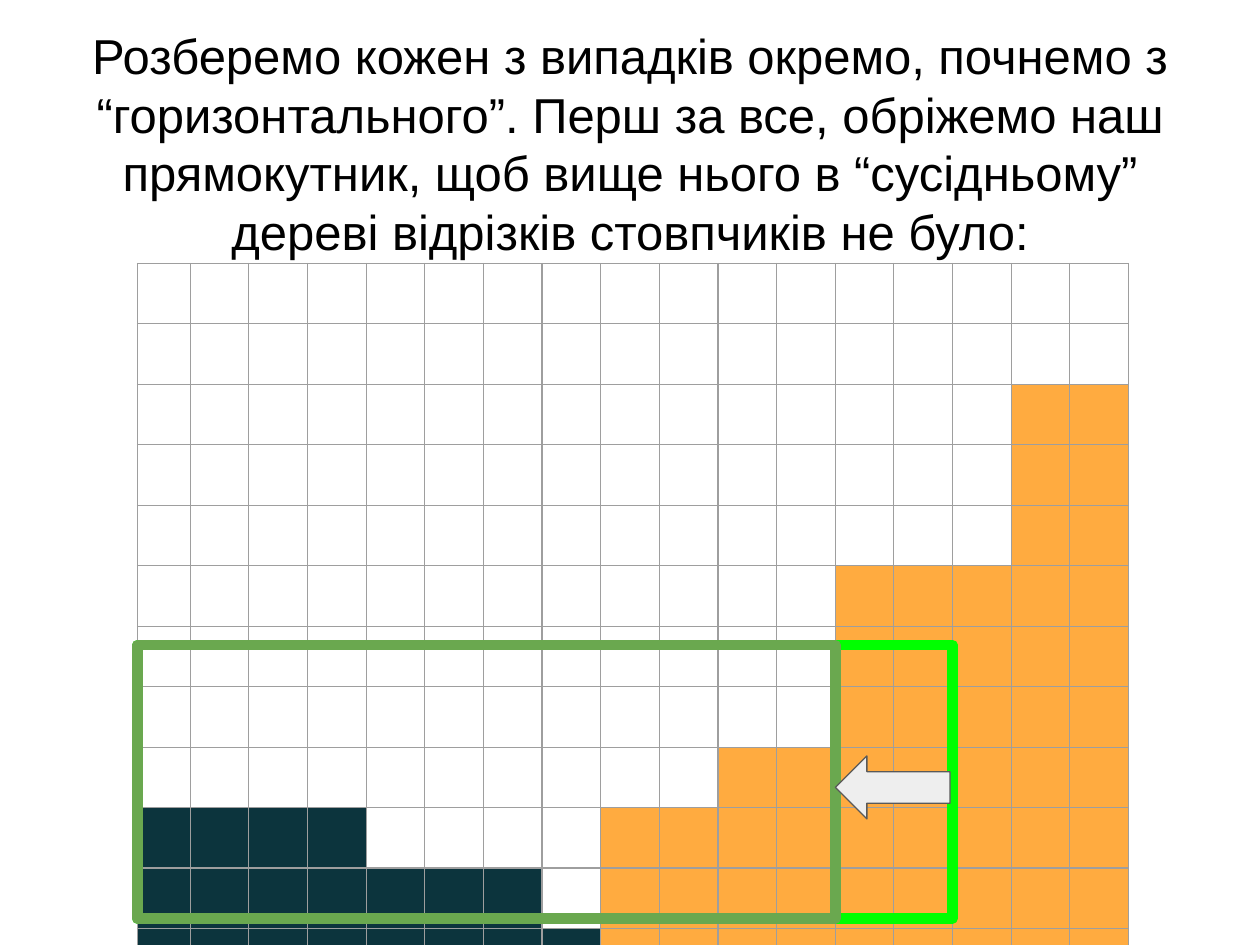
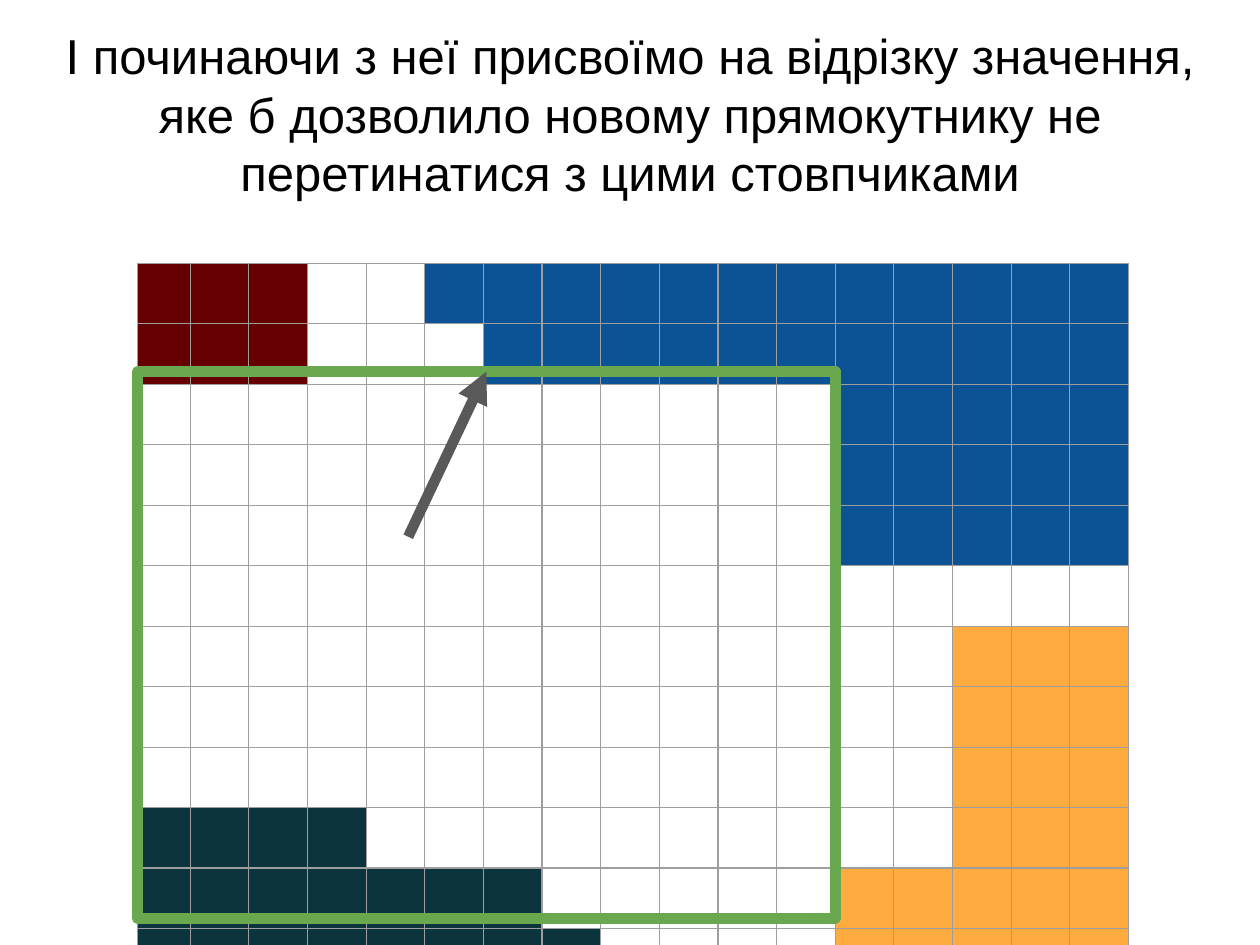
"""Two slides about trimming a rectangle between columns of a histogram grid."""
from lxml import etree
from pptx import Presentation
from pptx import util as u
from pptx.dml.color import RGBColor
from pptx.enum import shapes, text
from pptx.oxml.ns import qn

COLORS = {
    "background": "FFFFFF", "title": "000000", "grid": "9E9E9E",
    "dark": "0C343D", "orange": "FFAB40", "red": "660000", "blue": "0B5394",
    "before": "00FF00", "after": "6AA84F",
    "pointer": "595959", "pointer_fill": "EEEEEE",
}
FONT = "Arial"
ROWS, COLUMNS = 12, 17
GRID_LEFT, GRID_TOP, GRID_WIDTH = 1.09, 2.09, 7.87
FIRST_COLUMN, ROW_HEIGHT = 0.42, 0.48
COLUMN_WIDTH = (GRID_WIDTH - FIRST_COLUMN) / (COLUMNS - 1)
TRIMMED_WIDTH, RECTANGLE_BOTTOM = 5.54, 7.29

# Each step is (colour, first column, last column, height in cells).
DARK_STEPS = [("dark", 0, 3, 3), ("dark", 4, 6, 2), ("dark", 7, 7, 1)]
HORIZONTAL_STEPS = DARK_STEPS + [
    ("orange", 8, 9, 3), ("orange", 10, 11, 4),
    ("orange", 12, 14, 7), ("orange", 15, 16, 10)]
ASSIGNED_STEPS = DARK_STEPS + [("orange", 12, 13, 2), ("orange", 14, 16, 6)]
HANGING_STEPS = [
    ("red", 0, 2, 2), ("blue", 5, 5, 1), ("blue", 6, 11, 2), ("blue", 12, 16, 5)]


def rgb(name):
    """Return the named colour."""
    return RGBColor.from_string(COLORS[name])


def add_titled_slide(deck, wording):
    """Add a title-only slide with a centred title."""
    slide = deck.slides.add_slide(deck.slide_layouts[5])
    slide.background.fill.solid()
    slide.background.fill.fore_color.rgb = rgb("background")
    title = slide.shapes.title
    title.left, title.top = u.Inches(0.34), u.Inches(0.1)
    title.width, title.height = u.Inches(9.32), u.Inches(0.69)
    frame = title.text_frame
    frame.word_wrap = True
    frame.auto_size = text.MSO_AUTO_SIZE.NONE
    frame.vertical_anchor = text.MSO_ANCHOR.TOP
    frame.margin_left = frame.margin_right = u.Inches(0.1)
    frame.margin_top = frame.margin_bottom = u.Inches(0.1)
    paragraph = frame.paragraphs[0]
    paragraph.alignment = text.PP_ALIGN.CENTER
    paragraph.line_spacing = 1.0
    run = paragraph.add_run()
    run.text = wording
    run.font.name, run.font.size = FONT, u.Pt(28)
    run.font.color.rgb = rgb("title")
    return slide


def border_cell(cell):
    """Draw a thin grid line on all four sides of a cell."""
    properties = cell._tc.get_or_add_tcPr()
    for position, side in enumerate(("lnL", "lnR", "lnT", "lnB")):
        line = etree.Element(qn(f"a:{side}"), w=str(u.Pt(0.75)))
        fill = etree.SubElement(line, qn("a:solidFill"))
        etree.SubElement(fill, qn("a:srgbClr"), val=COLORS["grid"])
        properties.insert(position, line)


def cell_colors(standing, hanging):
    """Map (row, column) to the colour of the step that covers it."""
    covered = {}
    for steps, stands in ((standing, True), (hanging, False)):
        for color, first, last, height in steps:
            top = ROWS - height if stands else 0
            for row in range(top, top + height):
                for column in range(first, last + 1):
                    covered[row, column] = color
    return covered


def add_histogram(slide, standing, hanging=()):
    """Add the grid with columns standing on the floor or hanging from the top."""
    grid = slide.shapes.add_table(
        ROWS, COLUMNS, u.Inches(GRID_LEFT), u.Inches(GRID_TOP),
        u.Inches(GRID_WIDTH), u.Inches(ROWS * ROW_HEIGHT)).table
    grid.first_row = grid.horz_banding = False
    for index, column in enumerate(grid.columns):
        column.width = u.Inches(COLUMN_WIDTH if index else FIRST_COLUMN)
    covered = cell_colors(standing, hanging)
    for r, row in enumerate(grid.rows):
        row.height = u.Inches(ROW_HEIGHT)
        for c, cell in enumerate(row.cells):
            cell.fill.solid()
            cell.fill.fore_color.rgb = rgb(covered.get((r, c), "background"))
            border_cell(cell)


def add_rectangle(slide, top, width, color):
    """Outline a rectangle from the left edge of the grid."""
    outline = slide.shapes.add_shape(
        shapes.MSO_SHAPE.RECTANGLE, u.Inches(GRID_LEFT), u.Inches(top),
        u.Inches(width), u.Inches(RECTANGLE_BOTTOM - top))
    outline.shadow.inherit = False
    outline.fill.background()
    outline.line.color.rgb = rgb(color)
    outline.line.width = u.Pt(6)


def add_trim_arrow(slide):
    """Add the block arrow that shows where the rectangle is cut."""
    arrow = slide.shapes.add_shape(
        shapes.MSO_SHAPE.LEFT_ARROW, u.Inches(GRID_LEFT + TRIMMED_WIDTH),
        u.Inches(6), u.Inches(0.91), u.Inches(0.5))
    arrow.shadow.inherit = False
    arrow.fill.solid()
    arrow.fill.fore_color.rgb = rgb("pointer_fill")
    arrow.line.color.rgb = rgb("pointer")
    arrow.line.width = u.Pt(0.75)


def add_pointer(slide, start, end):
    """Add a thick line with an arrowhead at its end."""
    pointer = slide.shapes.add_connector(
        shapes.MSO_CONNECTOR.STRAIGHT, *map(u.Inches, start + end))
    pointer.line.color.rgb = rgb("pointer")
    pointer.line.width = u.Pt(6)
    line = pointer.line._get_or_add_ln()
    etree.SubElement(line, qn("a:tailEnd"), type="triangle")
    etree.SubElement(pointer._element.spPr, qn("a:effectLst"))


def main():
    """Build and save the deck."""
    deck = Presentation()
    deck.slide_width, deck.slide_height = u.Inches(10), u.Inches(7.5)

    trimming = add_titled_slide(
        deck,
        "Розберемо кожен з випадків окремо, почнемо з “горизонтального”. "
        "Перш за все, обріжемо наш прямокутник, щоб вище нього в “сусідньому” "
        "дереві відрізків стовпчиків не було:")
    add_histogram(trimming, HORIZONTAL_STEPS)
    add_rectangle(trimming, 5.12, 6.47, "before")
    add_rectangle(trimming, 5.12, TRIMMED_WIDTH, "after")
    add_trim_arrow(trimming)

    assigning = add_titled_slide(
        deck,
        "І починаючи з неї присвоїмо на відрізку значення, яке б дозволило "
        "новому прямокутнику не перетинатися з цими стовпчиками")
    add_histogram(assigning, ASSIGNED_STEPS, HANGING_STEPS)
    add_rectangle(assigning, 2.95, TRIMMED_WIDTH, "after")
    add_pointer(assigning, (3.24, 4.26), (3.86, 2.95))

    deck.save("out.pptx")


if __name__ == "__main__":
    main()
